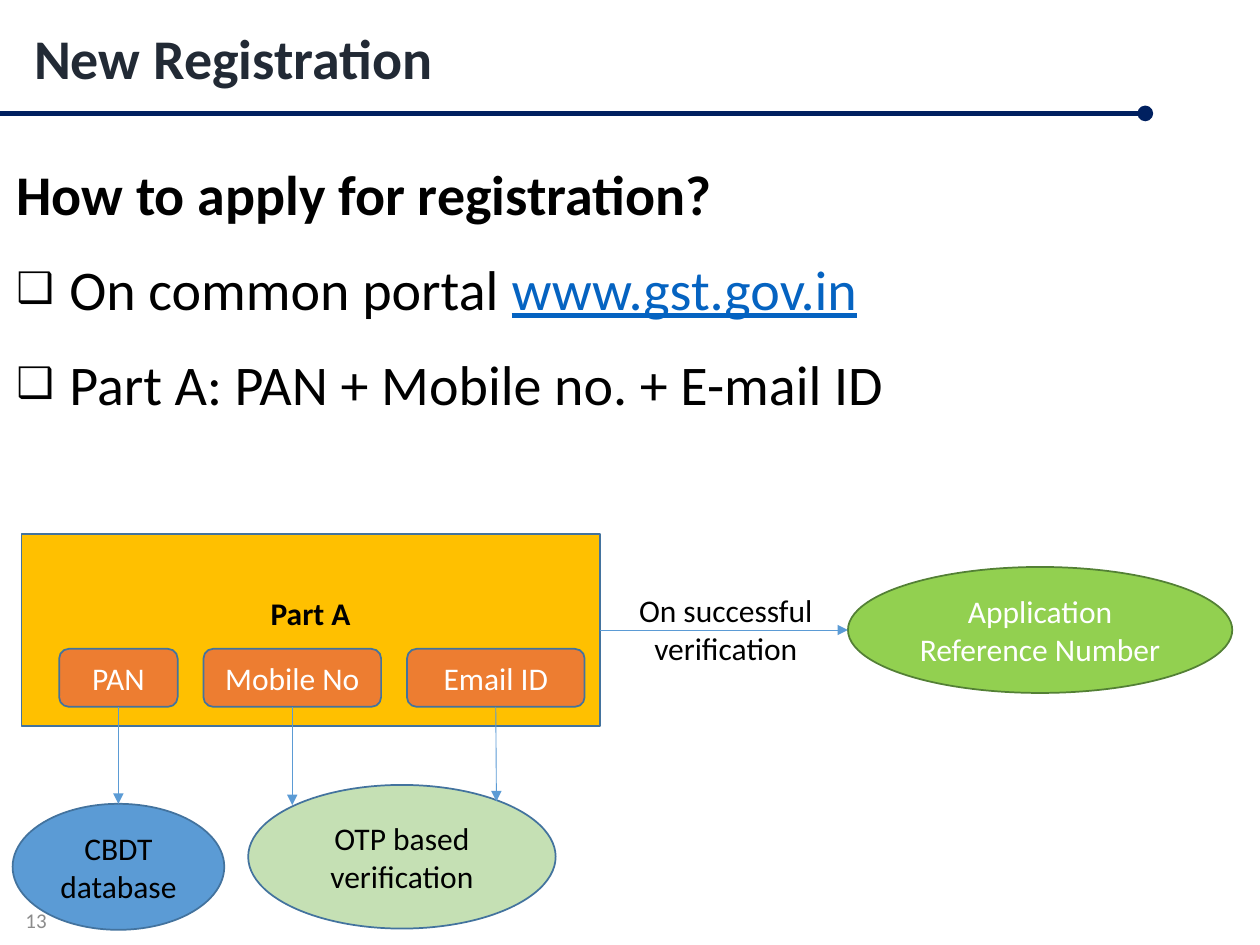
"""Build the slide on applying for a new registration."""
from dataclasses import dataclass
from typing import Any

from lxml import etree
from pptx import Presentation
from pptx.dml.color import RGBColor
from pptx.enum.dml import MSO_THEME_COLOR
from pptx.enum.shapes import MSO_CONNECTOR, MSO_SHAPE
from pptx.enum.text import MSO_ANCHOR, MSO_AUTO_SIZE, MSO_UNDERLINE, PP_ALIGN
from pptx.oxml.ns import qn
from pptx.util import Inches, Pt

RECTANGLE, ROUNDED, OVAL = MSO_SHAPE.RECTANGLE, MSO_SHAPE.ROUNDED_RECTANGLE, MSO_SHAPE.OVAL
STRAIGHT = MSO_CONNECTOR.STRAIGHT
TOP, MIDDLE = MSO_ANCHOR.TOP, MSO_ANCHOR.MIDDLE
LEFT, CENTER, RIGHT, JUSTIFY = PP_ALIGN.LEFT, PP_ALIGN.CENTER, PP_ALIGN.RIGHT, PP_ALIGN.JUSTIFY
FIXED_SIZE = MSO_AUTO_SIZE.NONE
SINGLE_UNDERLINE = MSO_UNDERLINE.SINGLE_LINE
SITE_TOP, SITE_BOTTOM, SITE_RIGHT = 0, 2, 3

BLACK = RGBColor(0x00, 0x00, 0x00)
WHITE = RGBColor(0xFF, 0xFF, 0xFF)
SLATE = RGBColor(0x22, 0x2A, 0x35)
NAVY = RGBColor(0x00, 0x20, 0x60)
GRAY = RGBColor(0x8C, 0x8C, 0x8C)
LINK = RGBColor(0x05, 0x63, 0xC1)
AMBER = RGBColor(0xFF, 0xC0, 0x00)
ORANGE = RGBColor(0xED, 0x7D, 0x31)
BLUE = RGBColor(0x5B, 0x9B, 0xD5)
OUTLINE = RGBColor(0x43, 0x73, 0x9E)
PALE_GREEN = RGBColor(0xC5, 0xE0, 0xB4)
GREEN = RGBColor(0x92, 0xD0, 0x50)
DARK_GREEN = RGBColor(0x53, 0x80, 0x35)

SLIDE_WIDTH, SLIDE_HEIGHT = Inches(10), Inches(7.5)
COLUMN, ROW = SLIDE_WIDTH // 100, SLIDE_HEIGHT // 75
FIELD_GAP = 2.05
BULLET_INDENT = Inches(0.42)


@dataclass(frozen=True)
class Box:
    """Place on the grid, in columns and rows."""
    left: float
    top: float
    width: float
    height: float

    def lengths(self) -> tuple[int, int, int, int]:
        """Return left, top, width and height as slide lengths."""
        return (int(self.left * COLUMN), int(self.top * ROW),
                int(self.width * COLUMN), int(self.height * ROW))


@dataclass(frozen=True)
class Node:
    """Labelled shape of the flow diagram."""
    text: str
    box: Box
    kind: int
    fill: RGBColor
    color: RGBColor = BLACK
    outline: RGBColor = OUTLINE
    bold: bool = False


def apply_format(target: Any, values: dict[str, Any]) -> None:
    """Set each attribute named in the format values."""
    for name, value in values.items():
        setattr(target, name, value)


def format_font(font: Any, size: float, color: RGBColor, bold: bool = False) -> None:
    """Give a font the slide's typeface, with its size, colour and weight."""
    apply_format(font, {"name": "Calibri", "size": Pt(size), "bold": bold})
    font.color.rgb = color


def write_text(frame: Any, text: str, size: float, color: RGBColor, alignment: int,
               anchor: int, bold: bool = False) -> None:
    """Fill a text frame with paragraphs of one format."""
    apply_format(frame, {"text": text, "word_wrap": True, "auto_size": FIXED_SIZE,
                         "vertical_anchor": anchor})
    for paragraph in frame.paragraphs:
        paragraph.alignment = alignment
        format_font(paragraph.font, size, color, bold)


def place(shape: Any, box: Box) -> None:
    """Move a placeholder to its place on the grid."""
    apply_format(shape, dict(zip(("left", "top", "width", "height"), box.lengths())))


def add_node(slide: Any, node: Node) -> Any:
    """Draw one labelled shape."""
    shape = slide.shapes.add_shape(node.kind, *node.box.lengths())
    shape.shadow.inherit = False
    shape.fill.solid()
    shape.fill.fore_color.rgb = node.fill
    shape.line.color.rgb = node.outline
    shape.line.width = Pt(1)
    write_text(shape.text_frame, node.text, 18, node.color, CENTER, MIDDLE, node.bold)
    return shape


def add_line(slide: Any, start: tuple[float, float], end: tuple[float, float],
             color: RGBColor = BLUE, width: float = 0.5, tail: str = "triangle") -> Any:
    """Draw a straight connector with a decorated end."""
    points = [int(value * unit) for point in (start, end)
              for value, unit in zip(point, (COLUMN, ROW))]
    connector = slide.shapes.add_connector(STRAIGHT, *points)
    connector.line.color.rgb = color
    connector.line.width = Pt(width)
    etree.SubElement(connector.line._get_or_add_ln(), qn("a:tailEnd"), type=tail)
    etree.SubElement(connector._element.spPr, qn("a:effectLst"))
    return connector


def add_label(slide: Any, box: Box, text: str, size: float, color: RGBColor,
              alignment: int, anchor: int) -> None:
    """Draw a free text label."""
    frame = slide.shapes.add_textbox(*box.lengths()).text_frame
    write_text(frame, text, size, color, alignment, anchor)


def format_list_item(paragraph: Any, bulleted: bool) -> None:
    """Set the indent, bullet and spacing of a body paragraph."""
    properties = paragraph._p.get_or_add_pPr()
    indent = BULLET_INDENT if bulleted else 0
    properties.set("marL", str(indent))
    properties.set("indent", str(-indent))
    if bulleted:
        etree.SubElement(properties, qn("a:buSzPct"), val="75000")
        etree.SubElement(properties, qn("a:buChar"), char="❑")
    else:
        etree.SubElement(properties, qn("a:buNone"))
    apply_format(paragraph, {"alignment": JUSTIFY, "line_spacing": 1.1, "space_after": Pt(6),
                             "space_before": Pt(6 if bulleted else 0)})
    format_font(paragraph.font, 32, BLACK, bold=not bulleted)


def add_body(slide: Any) -> None:
    """Fill the body placeholder with the question and its answers."""
    body = slide.placeholders[1]
    place(body, Box(0.3, 11.6, 97.5, 22.1))
    frame = body.text_frame
    frame.text = ("How to apply for registration?\nOn common portal \n"
                  "Part A: PAN + Mobile no. + E-mail ID")
    apply_format(frame, {"word_wrap": True, "auto_size": FIXED_SIZE, "vertical_anchor": TOP})
    for number, paragraph in enumerate(frame.paragraphs):
        format_list_item(paragraph, bulleted=number > 0)
    address = frame.paragraphs[1].add_run()
    address.text = "www.gst.gov.in"
    format_font(address.font, 32, LINK)
    address.font.underline = SINGLE_UNDERLINE


def add_diagram(slide: Any) -> None:
    """Draw the verification flow from Part A to the reference number."""
    part = add_node(slide, Node("Part A", Box(1.7, 42.4, 45.9, 15.2), RECTANGLE, AMBER, bold=True))
    part.text_frame.margin_bottom = Inches(0.32)
    fields, left = [], 4.7
    for text, width in (("PAN", 9.4), ("Mobile No", 14.1), ("Email ID", 14.1)):
        box = Box(left, 51.5, width, 4.6)
        fields.append(add_node(slide, Node(text, box, ROUNDED, ORANGE, WHITE)))
        left += width + FIELD_GAP
    database = add_node(slide, Node("CBDT database", Box(1, 63.8, 16.8, 10), OVAL, BLUE))
    add_node(slide, Node("OTP based verification", Box(19.7, 62.3, 24.4, 11.4), OVAL, PALE_GREEN))
    add_node(slide, Node("Application Reference Number", Box(67.3, 45, 30.5, 10), OVAL,
                         GREEN, WHITE, DARK_GREEN))
    arrows = [add_line(slide, (column, 56.1), (column, row))
              for column, row in ((9.4, 63.8), (23.2, 63.9), (39.4, 63.6))]
    for arrow, field in zip(arrows, fields):
        arrow.begin_connect(field, SITE_BOTTOM)
    arrows[0].end_connect(database, SITE_TOP)
    add_line(slide, (47.6, 50), (67.3, 50)).begin_connect(part, SITE_RIGHT)
    add_label(slide, Box(49.5, 46.4, 16.2, 7.1), "On successful\nverification", 18, BLACK,
              CENTER, TOP)


def main() -> None:
    """Build and save the presentation."""
    presentation = Presentation()
    apply_format(presentation, {"slide_width": SLIDE_WIDTH, "slide_height": SLIDE_HEIGHT})
    slide = presentation.slides.add_slide(presentation.slide_layouts[1])
    slide.background.fill.solid()
    slide.background.fill.fore_color.theme_color = MSO_THEME_COLOR.BACKGROUND_1
    add_line(slide, (0, 9), (90.9, 9), NAVY, 3, "oval")
    place(slide.shapes.title, Box(1.7, 1.4, 83.1, 6.4))
    write_text(slide.shapes.title.text_frame, "New Registration", 32, SLATE, LEFT, TOP, bold=True)
    add_body(slide)
    add_label(slide, Box(0, 71, 4.7, 4), "13", 12, GRAY, RIGHT, MIDDLE)
    add_diagram(slide)
    presentation.save("out.pptx")


if __name__ == "__main__":
    main()
